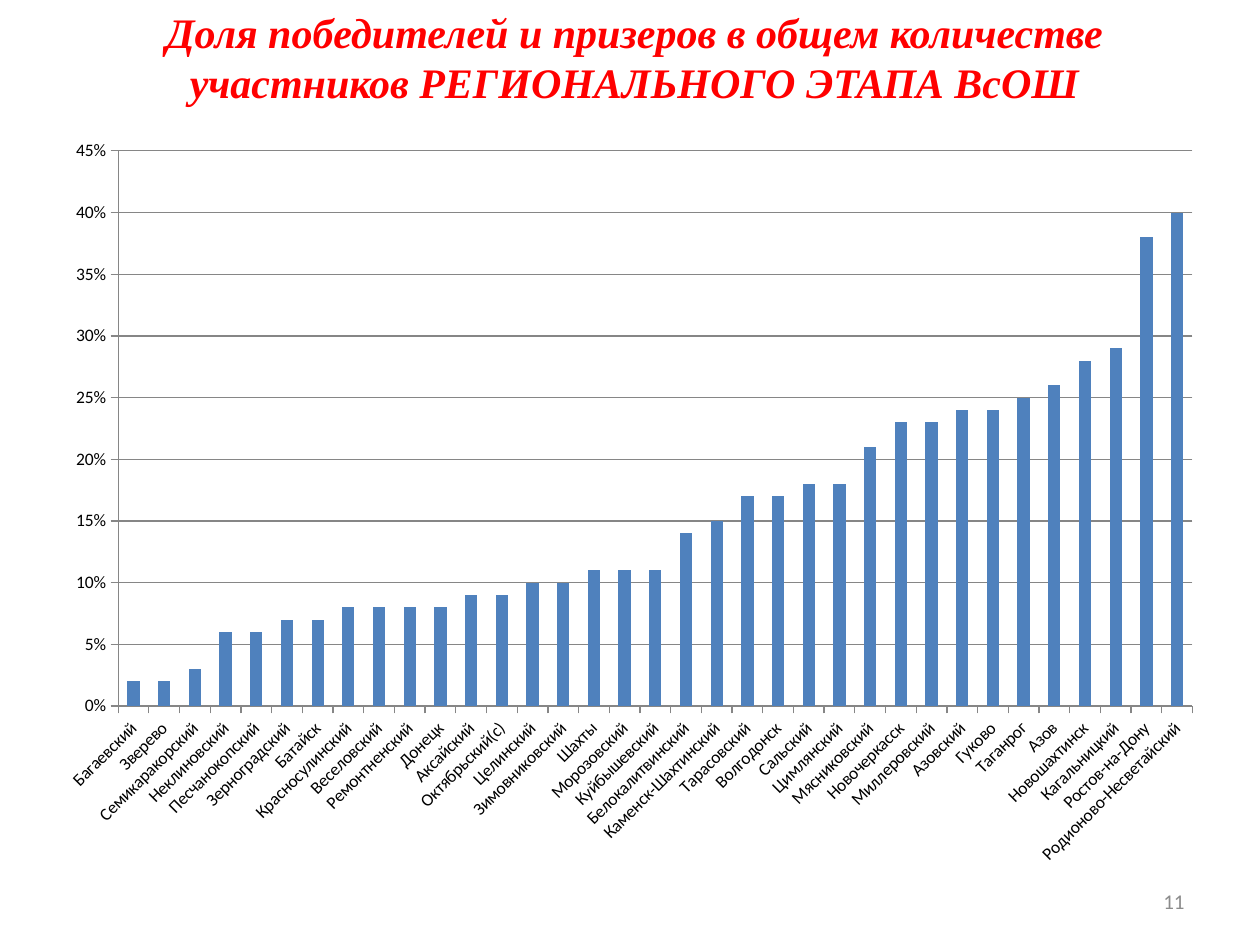
import pptx
import pptx.chart.data
import pptx.dml.color
import pptx.enum.chart
import pptx.enum.text
import pptx.util

Inches = pptx.util.Inches
Pt = pptx.util.Pt
RGBColor = pptx.dml.color.RGBColor
Align = pptx.enum.text.PP_ALIGN
Anchor = pptx.enum.text.MSO_ANCHOR

RED = RGBColor(0xFF, 0x00, 0x00)
GRAY = RGBColor(0x8C, 0x8C, 0x8C)
LINE_GRAY = RGBColor(0x86, 0x86, 0x86)
BLUE = RGBColor(0x4F, 0x81, 0xBD)
BLACK = RGBColor(0x00, 0x00, 0x00)

TITLE = ("Доля победителей и призеров в общем количестве "
         "участников РЕГИОНАЛЬНОГО ЭТАПА ВсОШ")
PAGE_NUMBER = "11"
WINNER_SHARE = [
    ("Багаевский", 0.02), ("Зверево", 0.02), ("Семикаракорский", 0.03),
    ("Неклиновский", 0.06), ("Песчанокопский", 0.06), ("Зерноградский", 0.07),
    ("Батайск", 0.07), ("Красносулинский", 0.08), ("Веселовский", 0.08),
    ("Ремонтненский", 0.08), ("Донецк", 0.08), ("Аксайский", 0.09),
    ("Октябрьский(с)", 0.09), ("Целинский", 0.1), ("Зимовниковский", 0.1),
    ("Шахты", 0.11), ("Морозовский", 0.11), ("Куйбышевский", 0.11),
    ("Белокалитвинский", 0.14), ("Каменск-Шахтинский", 0.15),
    ("Тарасовский", 0.17), ("Волгодонск", 0.17), ("Сальский", 0.18),
    ("Цимлянский", 0.18), ("Мясниковский", 0.21), ("Новочеркасск", 0.23),
    ("Миллеровский", 0.23), ("Азовский", 0.24), ("Гуково", 0.24),
    ("Таганрог", 0.25), ("Азов", 0.26), ("Новошахтинск", 0.28),
    ("Кагальницкий", 0.29), ("Ростов-на-Дону", 0.38),
    ("Родионово-Несветайский", 0.4),
]


def add_text(slide, box, text, font_name, size, color, align, anchor, strong=False):
    """Add a one-paragraph text box; strong means bold italic."""
    frame = slide.shapes.add_textbox(*map(Inches, box)).text_frame
    frame.word_wrap = True
    frame.vertical_anchor = anchor
    paragraph = frame.paragraphs[0]
    paragraph.alignment = align
    run = paragraph.add_run()
    run.text = text
    run.font.name = font_name
    run.font.size = Pt(size)
    run.font.bold = run.font.italic = strong
    run.font.color.rgb = color


def add_winner_chart(slide, box):
    data = pptx.chart.data.CategoryChartData(number_format="0%")
    data.categories = [name for name, _ in WINNER_SHARE]
    data.add_series("Series 1", [share for _, share in WINNER_SHARE])
    chart = slide.shapes.add_chart(
        pptx.enum.chart.XL_CHART_TYPE.COLUMN_CLUSTERED, *map(Inches, box), data).chart
    chart.has_legend = False
    chart.has_title = False
    chart.font.name = "Calibri"
    chart.font.size = Pt(10)
    chart.font.color.rgb = BLACK

    plot = chart.plots[0]
    plot.vary_by_categories = False
    plot.gap_width = 150
    fill = plot.series[0].format.fill
    fill.solid()
    fill.fore_color.rgb = BLUE

    value_axis = chart.value_axis
    value_axis.minimum_scale = 0
    value_axis.maximum_scale = 0.45
    value_axis.major_unit = 0.05
    value_axis.has_major_gridlines = True
    value_axis.tick_labels.number_format = "0%"
    value_axis.tick_labels.number_format_is_linked = False
    chart.category_axis.has_major_gridlines = False
    for axis in (value_axis, chart.category_axis):
        axis.major_tick_mark = pptx.enum.chart.XL_TICK_MARK.OUTSIDE
        axis.minor_tick_mark = pptx.enum.chart.XL_TICK_MARK.NONE
    for part in (value_axis, chart.category_axis, value_axis.major_gridlines):
        part.format.line.color.rgb = LINE_GRAY
        part.format.line.width = Pt(0.75)


def main():
    presentation = pptx.Presentation()
    presentation.slide_width = Inches(10)
    presentation.slide_height = Inches(7.5)
    slide = presentation.slides.add_slide(presentation.slide_layouts[6])
    add_text(slide, (7.17, 6.95, 2.33, 0.4), PAGE_NUMBER, "Calibri", 12, GRAY,
             Align.RIGHT, Anchor.MIDDLE)
    add_text(slide, (0.35, 0, 9.37, 1), TITLE, "Times New Roman", 24, RED,
             Align.CENTER, Anchor.TOP, strong=True)
    add_winner_chart(slide, (0.36, 1, 9.29, 5.98))
    presentation.save("out.pptx")


if __name__ == "__main__":
    main()
